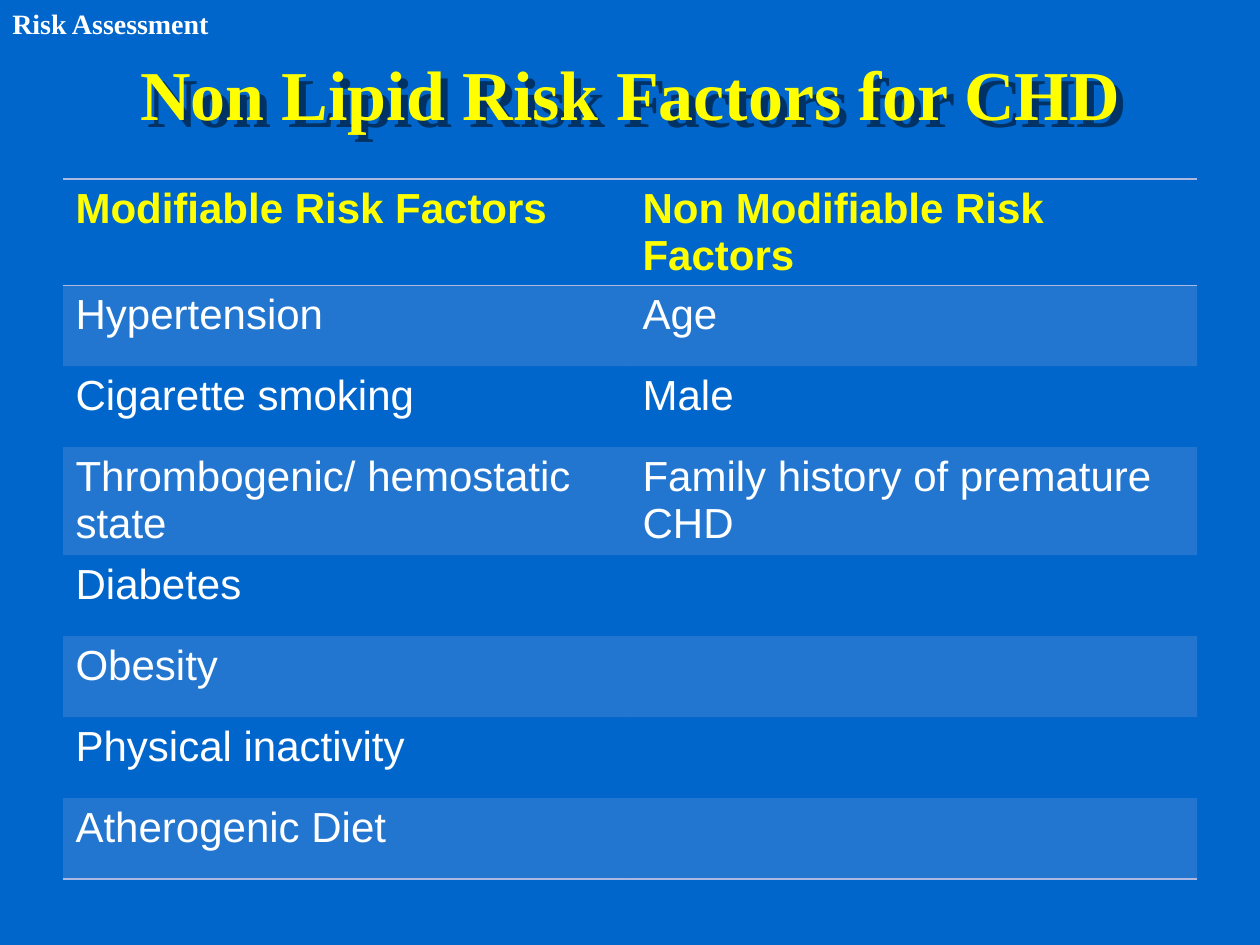
from lxml import etree
from pptx import Presentation
from pptx.dml.color import RGBColor
from pptx.enum.text import MSO_ANCHOR, MSO_AUTO_SIZE, PP_ALIGN
from pptx.oxml import parse_xml
from pptx.oxml.ns import nsdecls, qn
from pptx.util import Emu, Pt

# Content
SECTION = "Risk Assessment"
TITLE = "Non Lipid Risk Factors for CHD"
ROWS = [
    ("Modifiable Risk Factors", "Non Modifiable Risk Factors"),
    ("Hypertension", "Age"),
    ("Cigarette smoking", "Male"),
    ("Thrombogenic/ hemostatic state", "Family history of premature CHD"),
    ("Diabetes", ""),
    ("Obesity", ""),
    ("Physical inactivity", ""),
    ("Atherogenic Diet", ""),
]

# Look
BLUE = RGBColor(0x00, 0x66, 0xCC)
YELLOW = RGBColor(0xFF, 0xFF, 0x00)
WHITE = RGBColor(0xFF, 0xFF, 0xFF)
BAND = RGBColor(0xAA, 0xB8, 0xE2)
SERIF, SANS = "Times New Roman", "Arial"
CENTER, MIDDLE = PP_ALIGN.CENTER, MSO_ANCHOR.MIDDLE
FIT_SHAPE, FIXED = MSO_AUTO_SIZE.SHAPE_TO_FIT_TEXT, MSO_AUTO_SIZE.NONE
PLAIN_TABLE = "{2D5ABB26-0587-4C30-8999-92F81FD0307C}"

# Layout in px
MARGIN, TABLE_TOP, COLUMN_WIDTH = 63, 179, 567
ROW_HEIGHT, SPECIAL_HEIGHTS = 81, {0: 93, 3: 108}


def px(value):
    return Emu(value * 914400 // 126)


def place(shape, left, top, width, height):
    shape.left, shape.top = px(left), px(top)
    shape.width, shape.height = px(width), px(height)


def add_text(paragraph, text, font, size, color, bold):
    run = paragraph.add_run()
    run.text = text
    run.font.name = font
    run.font.size = Pt(size)
    run.font.color.rgb = color
    run.font.bold = bold


def style_cell(cell, banded, border_tags):
    properties = cell._tc.get_or_add_tcPr()
    if banded:
        cell.fill.solid()
        cell.fill.fore_color.rgb = BAND
        color = properties.find(".//" + qn("a:srgbClr"))
        etree.SubElement(color, qn("a:alpha"), val="20000")
    else:
        cell.fill.background()
    for position, tag in enumerate(border_tags):
        properties.insert(position, parse_xml(
            f'<a:{tag} {nsdecls("a")} w="12700"><a:solidFill>'
            f'<a:srgbClr val="{BAND}"/></a:solidFill></a:{tag}>'))


presentation = Presentation()
presentation.slide_width, presentation.slide_height = px(1260), px(945)
slide = presentation.slides.add_slide(presentation.slide_layouts[5])
slide.background.fill.solid()
slide.background.fill.fore_color.rgb = BLUE

# Title with its shadow
title = slide.shapes.title
place(title, MARGIN, 38, 1134, 110)
title.text_frame.auto_size = FIXED
title.text_frame.word_wrap = True
title.text_frame.vertical_anchor = MIDDLE
paragraph = title.text_frame.paragraphs[0]
paragraph.alignment = CENTER
add_text(paragraph, TITLE, SERIF, 40, YELLOW, True)
title._element.spPr.append(parse_xml(
    f'<a:effectLst {nsdecls("a")}><a:outerShdw dist="71842" dir="2700000">'
    '<a:srgbClr val="000000"><a:alpha val="50000"/></a:srgbClr>'
    '</a:outerShdw></a:effectLst>'))

# Table of risk factors
heights = [SPECIAL_HEIGHTS.get(index, ROW_HEIGHT) for index in range(len(ROWS))]
frame = slide.shapes.add_table(
    len(ROWS), 2, px(MARGIN), px(TABLE_TOP), px(2 * COLUMN_WIDTH), px(sum(heights)))
table = frame.table
table.first_row = table.horz_banding = False
table._tbl.tblPr.find(qn("a:tableStyleId")).text = PLAIN_TABLE
for column in table.columns:
    column.width = px(COLUMN_WIDTH)
borders = {0: ("lnT", "lnB"), len(ROWS) - 1: ("lnB",)}
for row_index, texts in enumerate(ROWS):
    table.rows[row_index].height = px(heights[row_index])
    header = row_index == 0
    for column_index, text in enumerate(texts):
        cell = table.cell(row_index, column_index)
        style_cell(cell, row_index % 2 == 1, borders.get(row_index, ()))
        if text:
            add_text(cell.text_frame.paragraphs[0], text, SANS, 24,
                     YELLOW if header else WHITE, header)

# Section label
label = slide.shapes.add_textbox(px(0), px(0), px(224), px(47))
label.text_frame.word_wrap = False
label.text_frame.auto_size = FIT_SHAPE
add_text(label.text_frame.paragraphs[0], SECTION, SERIF, 16, WHITE, True)

presentation.save("out.pptx")
